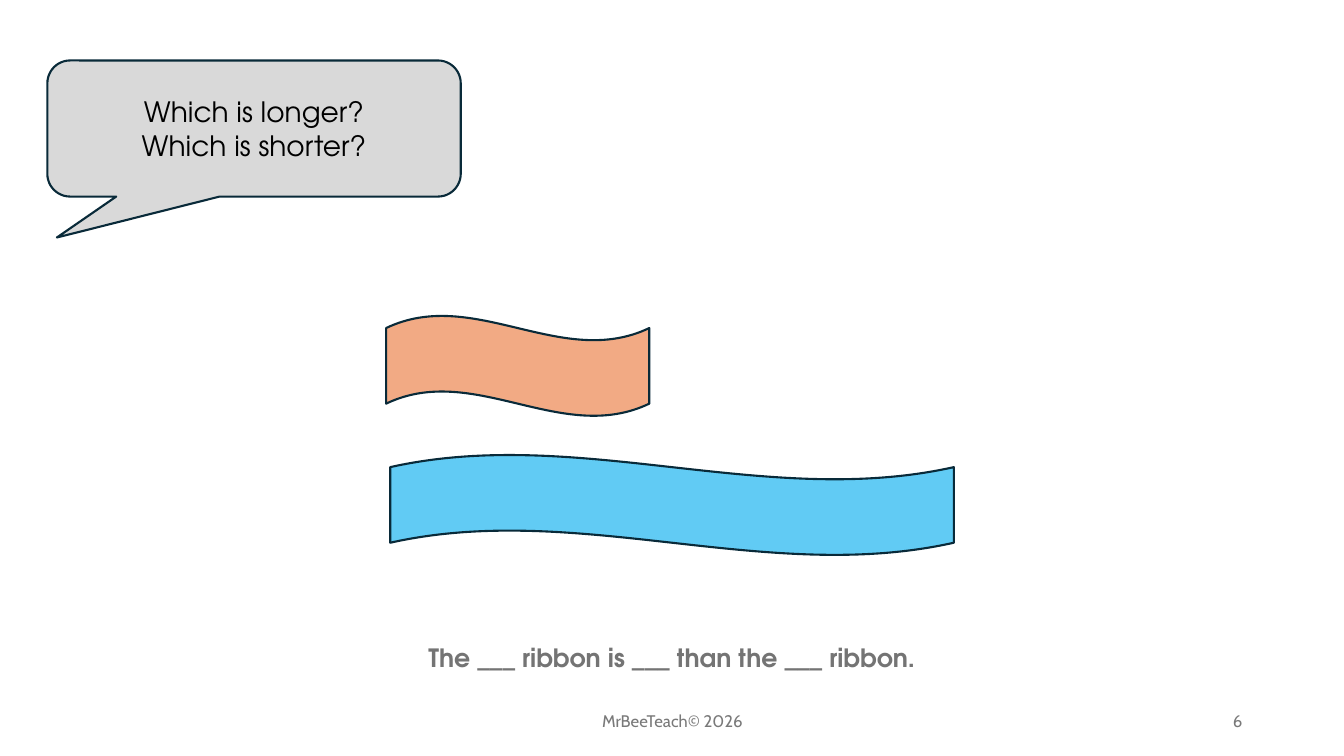
"""Build a slide that asks pupils to compare the lengths of two ribbons."""
from dataclasses import dataclass

from pptx import Presentation
from pptx.dml.color import RGBColor
from pptx.enum.shapes import MSO_SHAPE as Preset
from pptx.enum.text import MSO_ANCHOR as Anchor, PP_ALIGN as Align
from pptx.shapes.autoshape import Shape
from pptx.slide import Slide
from pptx.util import Inches, Pt

BLACK = RGBColor(0x00, 0x00, 0x00)
OUTLINE = RGBColor(0x09, 0x2A, 0x39)
CALLOUT_GREY = RGBColor(0xD9, 0xD9, 0xD9)
ORANGE = RGBColor(0xF2, 0xAA, 0x84)
BLUE = RGBColor(0x61, 0xCB, 0xF4)
SENTENCE_GREY = RGBColor(0x74, 0x74, 0x74)
FOOTER_GREY = RGBColor(0x79, 0x79, 0x79)
LESSON_FONT = "TeX Gyre Adventor"
FOOTER_FONT = "Cabin"


@dataclass(frozen=True)
class Area:
    left: float
    top: float
    width: float
    height: float

    def lengths(self) -> tuple[Inches, Inches, Inches, Inches]:
        return Inches(self.left), Inches(self.top), Inches(self.width), Inches(self.height)


@dataclass(frozen=True)
class Style:
    font: str
    size: int
    color: RGBColor
    bold: bool = False


@dataclass(frozen=True)
class Label:
    area: Area
    text: str
    style: Style
    align: Align = Align.CENTER
    anchor: Anchor = Anchor.MIDDLE


@dataclass(frozen=True)
class Figure:
    preset: Preset
    area: Area
    fill: RGBColor


FOOTER = Style(FOOTER_FONT, 12, FOOTER_GREY)
SENTENCE = Style(LESSON_FONT, 18, SENTENCE_GREY, bold=True)
QUESTION = Style(LESSON_FONT, 20, BLACK)

LABELS = [
    Label(Area(4.42, 6.95, 4.5, 0.4), "MrBeeTeach© 2026", FOOTER),
    Label(Area(9.42, 6.95, 3, 0.4), "6", FOOTER, align=Align.RIGHT),
    Label(Area(3.33, 6.32, 6.67, 0.4), "The ___ ribbon is ___ than the ___ ribbon.",
          SENTENCE, anchor=Anchor.TOP),
]
RIBBONS = [
    Figure(Preset.WAVE, Area(3.83, 3.13, 2.61, 1), ORANGE),
    Figure(Preset.WAVE, Area(3.87, 4.51, 5.59, 1), BLUE),
]
CALLOUT = Figure(Preset.ROUNDED_RECTANGULAR_CALLOUT, Area(0.47, 0.6, 4.1, 1.35), CALLOUT_GREY)
CALLOUT_TAIL = (-0.477, 0.801, 0.167)


def write(box: Shape, text: str, style: Style, align: Align, anchor: Anchor) -> None:
    frame = box.text_frame
    frame.word_wrap = True
    frame.vertical_anchor = anchor
    frame.text = text
    for para in frame.paragraphs:
        para.alignment = align
        for span in para.runs:
            span.font.name = style.font
            span.font.size = Pt(style.size)
            span.font.bold = style.bold
            span.font.color.rgb = style.color


def add_label(page: Slide, label: Label) -> None:
    box = page.shapes.add_textbox(*label.area.lengths())
    write(box, label.text, label.style, label.align, label.anchor)


def add_figure(page: Slide, figure: Figure) -> Shape:
    shape = page.shapes.add_shape(figure.preset, *figure.area.lengths())
    shape.shadow.inherit = False
    shape.fill.solid()
    shape.fill.fore_color.rgb = figure.fill
    shape.line.color.rgb = OUTLINE
    shape.line.width = Pt(1.5)
    return shape


def main() -> None:
    deck = Presentation()
    deck.slide_width, deck.slide_height = Inches(13.33), Inches(7.5)
    page = deck.slides.add_slide(deck.slide_layouts[6])
    for label in LABELS:
        add_label(page, label)
    for ribbon in RIBBONS:
        add_figure(page, ribbon)
    callout = add_figure(page, CALLOUT)
    for index, value in enumerate(CALLOUT_TAIL):
        callout.adjustments[index] = value
    write(callout, "Which is longer?\nWhich is shorter?", QUESTION, Align.CENTER, Anchor.MIDDLE)
    deck.save("out.pptx")


if __name__ == "__main__":
    main()
